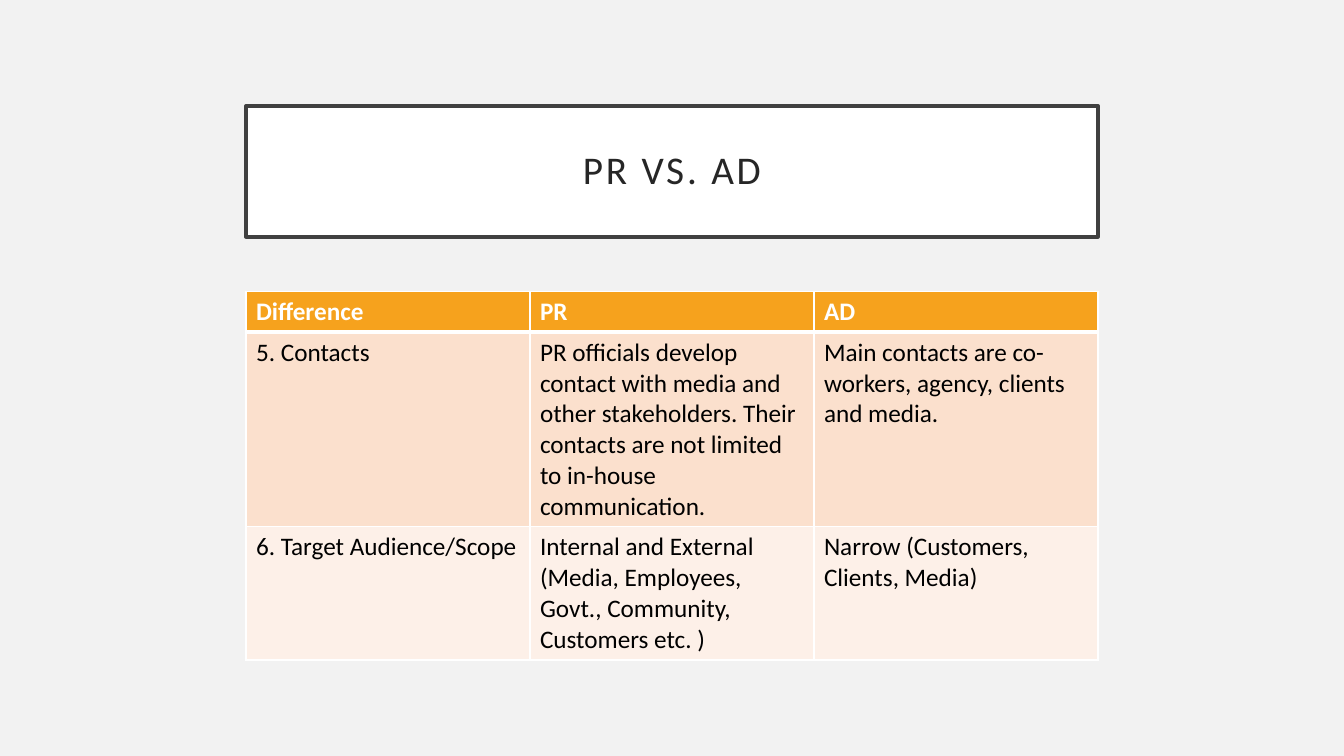
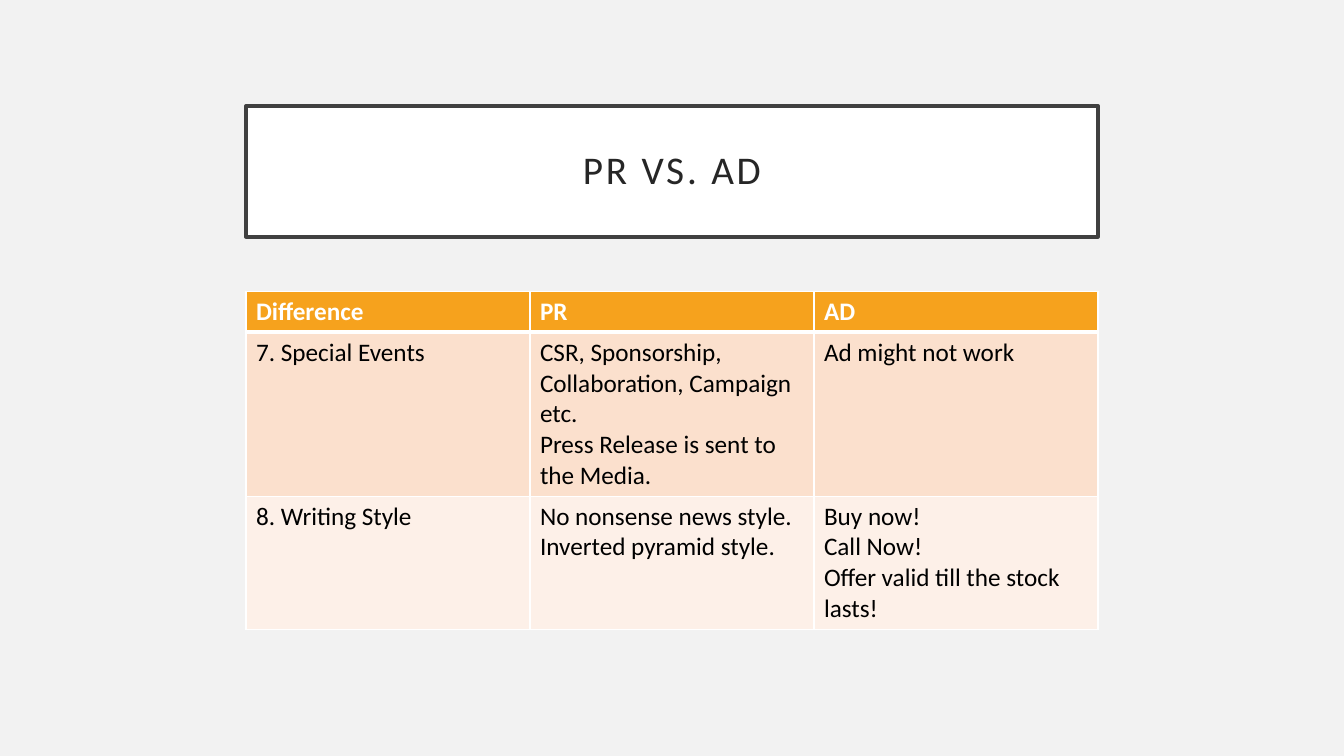
"""Build two slides comparing PR and advertising in tables."""
import pptx
import pptx.dml.color
import pptx.enum.text
import pptx.oxml
import pptx.oxml.ns
import pptx.util

Pt = pptx.util.Pt
RGBColor = pptx.dml.color.RGBColor

PAPER = RGBColor(0xF2, 0xF2, 0xF2)
WHITE = RGBColor(0xFF, 0xFF, 0xFF)
BLACK = RGBColor(0x00, 0x00, 0x00)
FRAME = RGBColor(0x40, 0x40, 0x40)
TITLE_INK = RGBColor(0x26, 0x26, 0x26)
ORANGE = RGBColor(0xF6, 0xA2, 0x1D)
PEACH = RGBColor(0xFB, 0xE0, 0xCD)
CREAM = RGBColor(0xFD, 0xF0, 0xE8)
ROW_FILLS = [ORANGE, PEACH, CREAM]

FONT = "Calibri"
LEFT = 175.7
WIDTH = 608.6
TITLE_TOP = 75.6
TITLE_HEIGHT = 93.6
TABLE_TOP = 208.1
ROW_HEIGHT = 29.2

HEADER = [["Difference"], ["PR"], ["AD"]]
TABLES = [
    [
        HEADER,
        [
            ["5. Contacts"],
            ["PR officials develop contact with media and other stakeholders. "
             "Their contacts are not limited to in-house communication."],
            ["Main contacts are co-workers, agency, clients and media."],
        ],
        [
            ["6. Target Audience/Scope"],
            ["Internal and External",
             "(Media, Employees, Govt., Community, Customers etc. )"],
            ["Narrow (Customers, Clients, Media)"],
        ],
    ],
    [
        HEADER,
        [
            ["7. Special Events"],
            ["CSR, Sponsorship, Collaboration, Campaign etc.",
             "Press Release is sent to the Media."],
            ["Ad might not work"],
        ],
        [
            ["8. Writing Style"],
            ["No nonsense news style. Inverted pyramid style."],
            ["Buy now!", "Call Now!", "Offer valid till the stock lasts!"],
        ],
    ],
]


def add_span(para, text, size, color, bold=False):
    span = para.add_run()
    span.text = text
    span.font.name = FONT
    span.font.size = Pt(size)
    span.font.color.rgb = color
    span.font.bold = bold
    return span


def add_border(cell, side, points):
    cell._tc.get_or_add_tcPr().append(pptx.oxml.parse_xml(
        f'<a:{side} {pptx.oxml.ns.nsdecls("a")} w="{Pt(points)}">'
        f'<a:solidFill><a:srgbClr val="{WHITE}"/></a:solidFill></a:{side}>'
    ))


deck = pptx.Presentation()
deck.slide_width = Pt(960)
deck.slide_height = Pt(540)
background = deck.slide_master.background.fill
background.solid()
background.fore_color.rgb = PAPER

for rows in TABLES:
    page = deck.slides.add_slide(deck.slide_layouts[5])

    title = page.shapes.title
    title.left, title.top = Pt(LEFT), Pt(TITLE_TOP)
    title.width, title.height = Pt(WIDTH), Pt(TITLE_HEIGHT)
    title.fill.solid()
    title.fill.fore_color.rgb = WHITE
    title.line.color.rgb = FRAME
    title.line.width = Pt(2.5)
    frame = title.text_frame
    frame.word_wrap = True
    frame.auto_size = pptx.enum.text.MSO_AUTO_SIZE.NONE
    frame.vertical_anchor = pptx.enum.text.MSO_ANCHOR.MIDDLE
    frame.margin_left = frame.margin_right = Pt(14.4)
    frame.margin_top = frame.margin_bottom = Pt(14.4)
    para = frame.paragraphs[0]
    para.alignment = pptx.enum.text.PP_ALIGN.CENTER
    para.line_spacing = 0.9
    span = add_span(para, "PR VS. AD", 28, TITLE_INK)
    span._r.get_or_add_rPr().set("spc", "200")

    table = page.shapes.add_table(
        len(rows), len(HEADER), Pt(LEFT), Pt(TABLE_TOP),
        Pt(WIDTH), Pt(ROW_HEIGHT * len(rows)),
    ).table
    for row_index, (row, fill) in enumerate(zip(rows, ROW_FILLS)):
        is_header = row_index == 0
        for column_index, lines in enumerate(row):
            cell = table.cell(row_index, column_index)
            add_border(cell, "lnL", 1)
            add_border(cell, "lnR", 1)
            add_border(cell, "lnT", 3 if row_index == 1 else 1)
            add_border(cell, "lnB", 3 if is_header else 1)
            cell.fill.solid()
            cell.fill.fore_color.rgb = fill
            for line_index, line in enumerate(lines):
                text = cell.text_frame
                para = text.add_paragraph() if line_index else text.paragraphs[0]
                add_span(para, line, 18, WHITE if is_header else BLACK, is_header)

deck.save("out.pptx")
